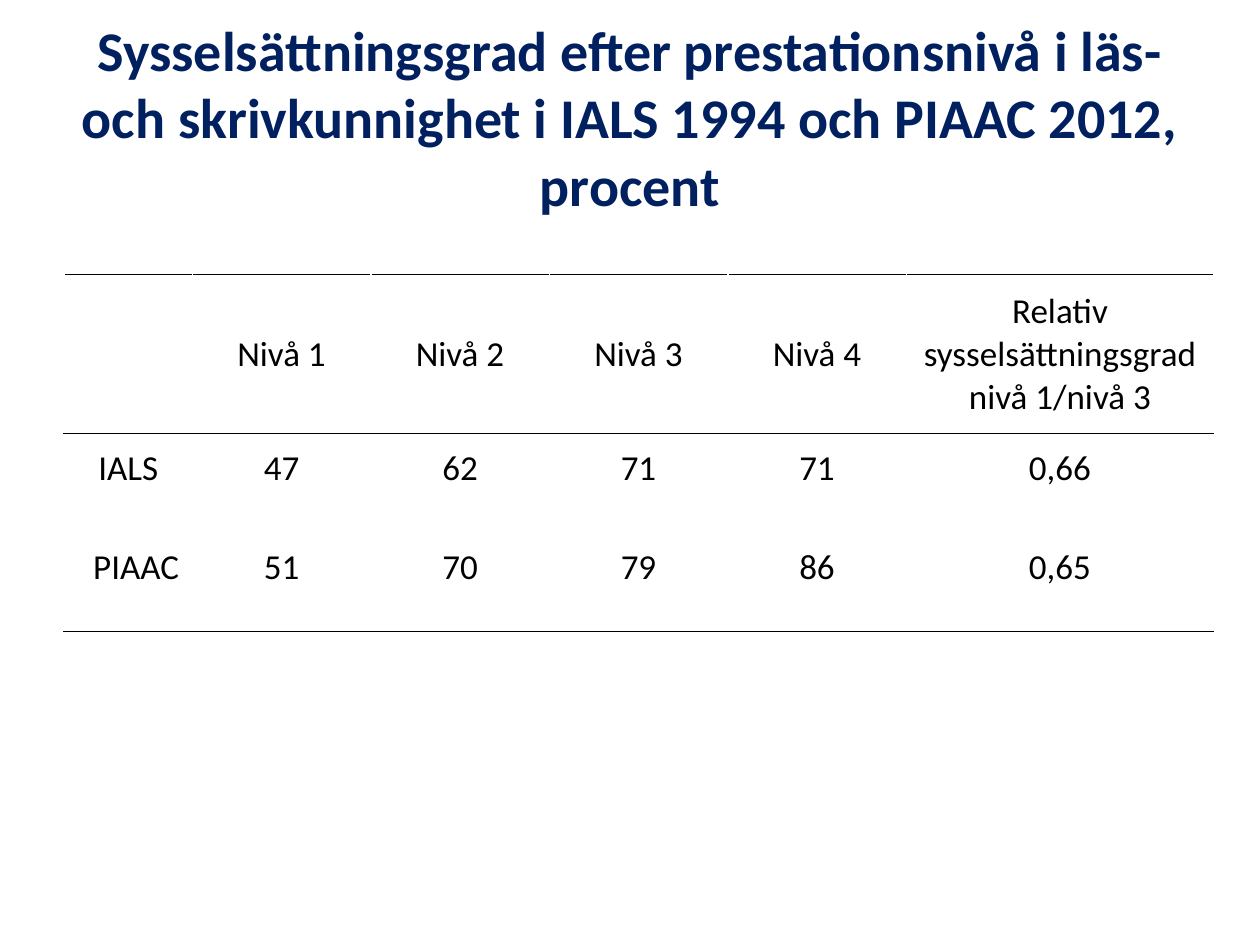
from lxml import etree
from pptx import Presentation
from pptx.dml.color import RGBColor
from pptx.enum.text import MSO_ANCHOR, PP_ALIGN
from pptx.oxml.ns import qn
from pptx.util import Pt

CENTER = PP_ALIGN.CENTER
MIDDLE = MSO_ANCHOR.MIDDLE
FONT = "Calibri"
NAVY, BLACK, WHITE = "002060", "000000", "FFFFFF"
TITLE = ("Sysselsättningsgrad efter prestationsnivå i läs- och skrivkunnighet "
         "i IALS 1994 och PIAAC 2012, procent")
ROWS = [
    ["", "Nivå 1", "Nivå 2", "Nivå 3", "Nivå 4",
     "Relativ sysselsättningsgrad nivå 1/nivå 3"],
    ["IALS", "47", "62", "71", "71", "0,66"],
    ["PIAAC", "51", "70", "79", "86", "0,65"],
]
COLUMN_WIDTHS = [73.2, 102, 102, 102, 102, 175.7]
ROW_HEIGHTS = [90.7, 39.6, 73.4]
# Horizontal rules in each row: above and below the header, and below the last row
ROW_RULES = [("a:lnB", "a:lnT"), ("a:lnT",), ("a:lnB",)]


def format_paragraph(paragraph, size, color, bold=False):
    paragraph.alignment = CENTER
    paragraph.font.name = FONT
    paragraph.font.size = Pt(size)
    paragraph.font.bold = bold
    paragraph.font.color.rgb = RGBColor.from_string(color)


def add_border(cell, tag):
    """Put a thin black line on one side; lines must come before the cell fill."""
    border = etree.Element(qn(tag), w=str(Pt(0.5)))
    fill = etree.SubElement(border, qn("a:solidFill"))
    etree.SubElement(fill, qn("a:srgbClr"), val=BLACK)
    cell._tc.get_or_add_tcPr().insert(0, border)


presentation = Presentation()
presentation.slide_width, presentation.slide_height = Pt(720), Pt(540)
slide = presentation.slides.add_slide(presentation.slide_layouts[5])

title = slide.shapes.title
title.left, title.top, title.width, title.height = Pt(36), Pt(21.6), Pt(648), Pt(90)
title.text_frame.text = TITLE
title.text_frame.vertical_anchor = MIDDLE
format_paragraph(title.text_frame.paragraphs[0], 32, NAVY, bold=True)

table = slide.shapes.add_table(
    len(ROWS), len(COLUMN_WIDTHS), Pt(36.7), Pt(157),
    Pt(sum(COLUMN_WIDTHS)), Pt(sum(ROW_HEIGHTS))).table
table.first_row = False
table.horz_banding = False
for column, width in zip(table.columns, COLUMN_WIDTHS):
    column.width = Pt(width)

for row, height, texts, rules in zip(table.rows, ROW_HEIGHTS, ROWS, ROW_RULES):
    row.height = Pt(height)
    for cell, text in zip(row.cells, texts):
        cell.text = text
        cell.vertical_anchor = MIDDLE
        cell.margin_left = cell.margin_right = cell.margin_top = Pt(0.7)
        cell.margin_bottom = Pt(0)
        cell.fill.solid()
        cell.fill.fore_color.rgb = RGBColor.from_string(WHITE)
        format_paragraph(cell.text_frame.paragraphs[0], 20, BLACK)
        for tag in rules:
            add_border(cell, tag)

# The PIAAC label sits slightly right of the column centre
table.cell(2, 0).margin_left = Pt(9.7)

presentation.save("out.pptx")
